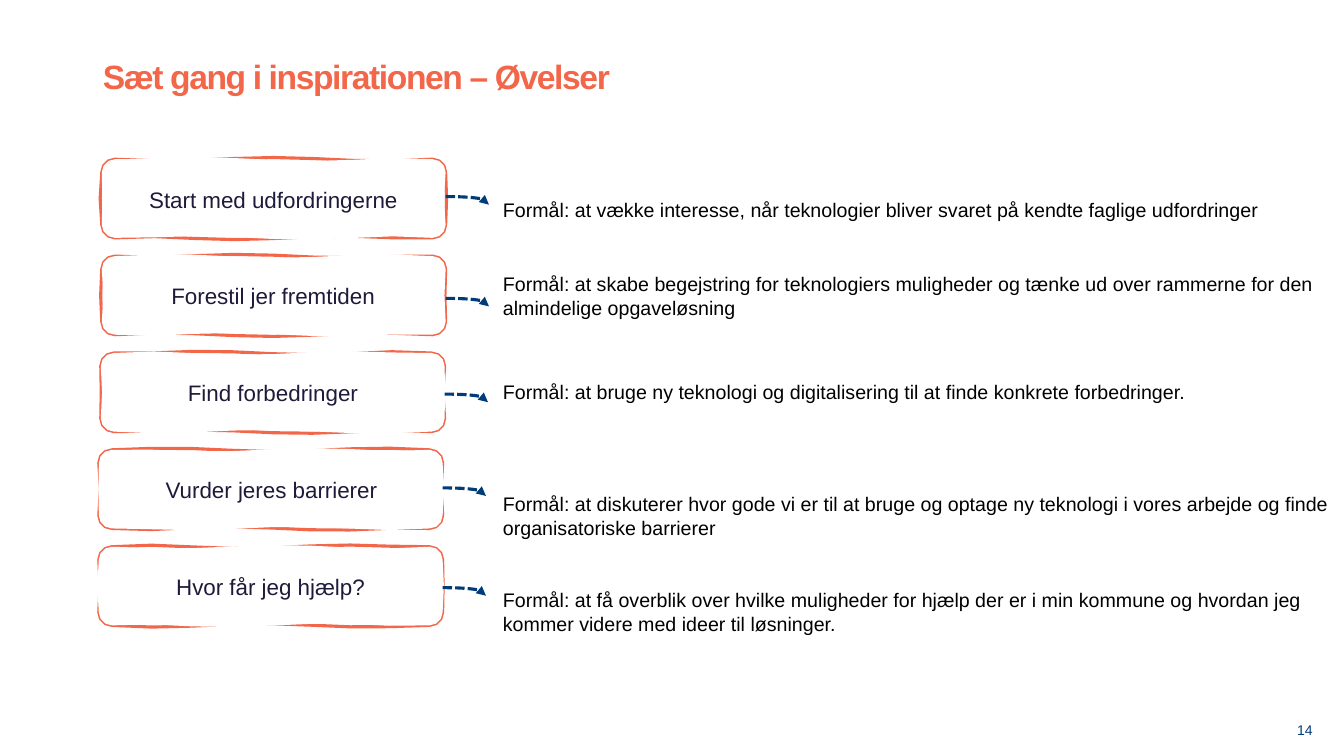
from collections import namedtuple
from copy import deepcopy
from math import cos, pi, sin

from pptx import Presentation
from pptx.dml.color import RGBColor
from pptx.enum.dml import MSO_LINE_DASH_STYLE as Dash
from pptx.enum.shapes import MSO_CONNECTOR as Connector
from pptx.enum.text import MSO_ANCHOR as Anchor, MSO_AUTO_SIZE as AutoSize, PP_ALIGN as Align
from pptx.oxml.ns import qn
from pptx.oxml.xmlchemy import OxmlElement
from pptx.util import Inches, Pt

CORAL = RGBColor(0xF2, 0x67, 0x49)
NAVY = RGBColor(0x00, 0x3B, 0x7A)
INK = RGBColor(0x1E, 0x1B, 0x3A)
BLACK = RGBColor(0x00, 0x00, 0x00)
WHITE = RGBColor(0xFF, 0xFF, 0xFF)
FONT = "Arial"

# The grid has 133.3 columns and 75 rows of square cells
CELL = Inches(0.1)
FIRST_ROW, ROW_PITCH = 15.8, 9.61
BUTTON_WIDTH, BUTTON_HEIGHT, CORNER = 34.1, 7.8, 1.3
PURPOSE_LEFT, PURPOSE_WIDTH = 48.9, 84.4
ARROW_WIDTH, ARROW_DROP = 4.3, 0.8
ARC_STEPS, LONG_STEPS, SHORT_STEPS = 3, 8, 2

Box = namedtuple("Box", "left top width height")
Exercise = namedtuple("Exercise", "name left arrow_top purpose_top purpose_height purpose")

EXERCISES = [
    Exercise("Start med udfordringerne", 10.1, 19.5, 19.1, 3.4,
             "Formål: at vække interesse, når teknologier bliver svaret på kendte "
             "faglige udfordringer"),
    Exercise("Forestil jer fremtiden", 10.1, 29.6, 26.5, 5.7,
             "Formål: at skabe begejstring for teknologiers muligheder og tænke ud over "
             "rammerne for den almindelige opgaveløsning"),
    Exercise("Find forbedringer", 10, 39.1, 37.2, 3.4,
             "Formål: at bruge ny teknologi og digitalisering til at finde konkrete "
             "forbedringer."),
    Exercise("Vurder jeres barrierer", 9.8, 48.4, 48.35, 5.7,
             "Formål: at diskuterer hvor gode vi er til at bruge og optage ny teknologi "
             "i vores arbejde og finde organisatoriske barrierer"),
    Exercise("Hvor får jeg hjælp?", 9.8, 58.3, 57.85, 5.7,
             "Formål: at få overblik over hvilke muligheder for hjælp der er i min "
             "kommune og hvordan jeg kommer videre med ideer til løsninger."),
]


def cells(*counts):
    return [round(count * CELL) for count in counts]


def write(shape, text, size, color, align=Align.LEFT, anchor=Anchor.TOP, bold=False):
    frame = shape.text_frame
    frame.word_wrap = True
    frame.auto_size = AutoSize.NONE
    frame.vertical_anchor = anchor
    frame.text = text
    paragraph = frame.paragraphs[0]
    paragraph.alignment = align
    font = paragraph.font
    font.name, font.size, font.bold = FONT, Pt(size), bold
    font.color.rgb = color
    return paragraph


def wavy_outline(box, phase):
    """Points of a rounded box whose long sides wave like a pen stroke."""
    right, bottom = box.left + box.width, box.top + box.height
    # Each corner: centre of its arc and the angle at which the arc starts
    corners = [
        (box.left + CORNER, box.top + CORNER, pi),
        (right - CORNER, box.top + CORNER, 1.5 * pi),
        (right - CORNER, bottom - CORNER, 0),
        (box.left + CORNER, bottom - CORNER, 0.5 * pi),
    ]
    points = []
    for side, (x, y, start) in enumerate(corners):
        for step in range(ARC_STEPS + 1):
            angle = start + step * pi / 2 / ARC_STEPS
            points.append((x + CORNER * cos(angle), y + CORNER * sin(angle)))
        x1, y1 = points[-1]
        horizontal = side % 2 == 0
        length = (box.width if horizontal else box.height) - 2 * CORNER
        direction = 1 if side < 2 else -1
        waves, steps = (1.5, LONG_STEPS) if horizontal else (0.5, SHORT_STEPS)
        for step in range(1, steps):
            share = step / steps
            shift = 0.17 * sin(2 * pi * waves * share + phase + side)
            along = direction * length * share
            points.append((x1 + along, y1 + shift) if horizontal
                          else (x1 + shift, y1 + along))
    return [tuple(cells(*point)) for point in points]


def add_button(slide, box, name, phase):
    stroke, inside = wavy_outline(box, phase), wavy_outline(box, phase + 2)
    builder = slide.shapes.build_freeform(*stroke[0])
    builder.add_line_segments(stroke[1:], close=True)
    builder.move_to(*inside[0])
    builder.add_line_segments(inside[1:], close=True)
    button = builder.convert_to_shape()
    # Split the contours: the first is only stroked, the second only filled
    outline = button._element.xpath(".//a:path")[0]
    interior = deepcopy(outline)
    half = len(outline) // 2
    for node in outline[half:]:
        outline.remove(node)
    for node in interior[:half]:
        interior.remove(node)
    outline.set("fill", "none")
    interior.set("stroke", "0")
    outline.addnext(interior)

    button.shadow.inherit = False
    button.fill.solid()
    button.fill.fore_color.rgb = WHITE
    button.line.color.rgb = CORAL
    button.line.width = Pt(2.25)
    paragraph = write(button, name, 16, INK, Align.CENTER, Anchor.MIDDLE)
    paragraph.line_spacing = 1.04


def add_arrow(slide, box):
    ends = cells(box.left, box.top, box.left + box.width, box.top + box.height)
    arrow = slide.shapes.add_connector(Connector.CURVE, *ends)
    arrow.line.color.rgb = NAVY
    arrow.line.width = Pt(2.25)
    arrow.line.dash_style = Dash.SQUARE_DOT
    properties = arrow._element.spPr
    tail = OxmlElement("a:tailEnd")
    tail.set("type", "triangle")
    properties.find(qn("a:ln")).append(tail)
    properties.append(OxmlElement("a:effectLst"))
    # Bend close to the arrowhead
    bend = OxmlElement("a:gd")
    bend.set("name", "adj1")
    bend.set("fmla", "val 92600")
    properties.find(qn("a:prstGeom")).get_or_add_avLst().append(bend)


def add_title(slide, box, text):
    title = slide.shapes.title
    title.left, title.top, title.width, title.height = cells(*box)
    paragraph = write(title, text, 24, CORAL, anchor=Anchor.MIDDLE, bold=True)
    paragraph.line_spacing = 1.04
    paragraph.runs[0].font._element.set("spc", "-100")


def add_exercise(slide, box, exercise, phase):
    """One row: button, arrow and purpose."""
    add_button(slide, box, exercise.name, phase)
    add_arrow(slide, Box(box.left + box.width, exercise.arrow_top, ARROW_WIDTH, ARROW_DROP))
    purpose = slide.shapes.add_textbox(*cells(
        PURPOSE_LEFT, exercise.purpose_top, PURPOSE_WIDTH, exercise.purpose_height))
    write(purpose, exercise.purpose, 14, BLACK)
    purpose.text_frame.margin_right = 0


def add_page_number(slide, box, number):
    page = slide.shapes.add_textbox(*cells(*box))
    write(page, number, 10, NAVY, Align.RIGHT, Anchor.BOTTOM)
    frame = page.text_frame
    frame.margin_left = frame.margin_top = frame.margin_right = frame.margin_bottom = 0


def main():
    presentation = Presentation()
    presentation.slide_width, presentation.slide_height = Inches(13.33), Inches(7.5)
    slide = presentation.slides.add_slide(presentation.slide_layouts[5])
    add_title(slide, Box(9.2, 4.7, 80.8, 5.6), "Sæt gang i inspirationen – Øvelser")
    for row, exercise in enumerate(EXERCISES):
        box = Box(exercise.left, FIRST_ROW + row * ROW_PITCH, BUTTON_WIDTH, BUTTON_HEIGHT)
        add_exercise(slide, box, exercise, phase=row)
    add_page_number(slide, Box(124.1, 68.4, 6.1, 4.8), "14")
    presentation.save("out.pptx")


if __name__ == "__main__":
    main()
